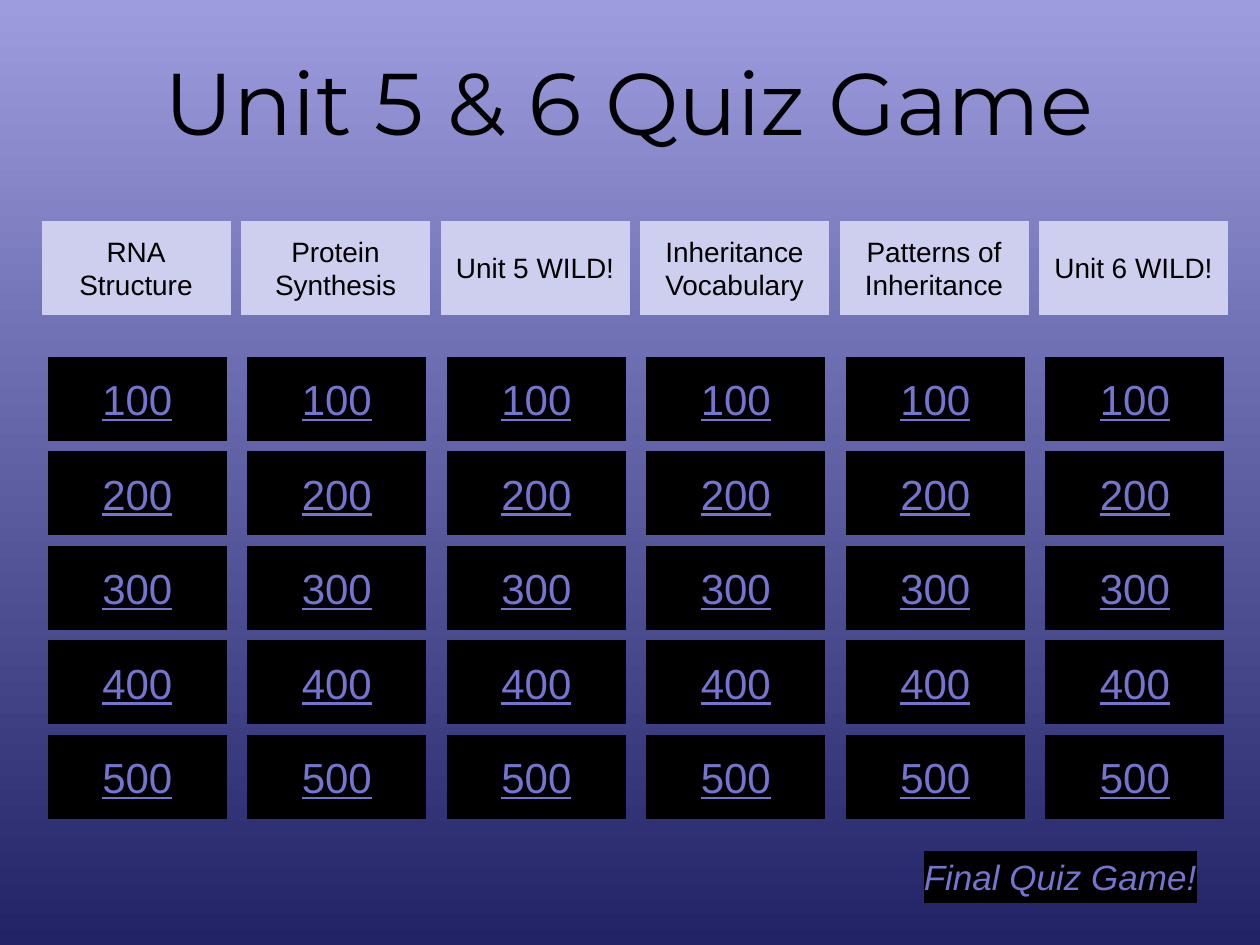
from pptx import Presentation
from pptx.dml.color import RGBColor as Rgb
from pptx.enum.shapes import MSO_SHAPE as Shape
from pptx.enum.text import MSO_ANCHOR as Anchor, MSO_AUTO_SIZE as Fit, PP_ALIGN as Align
from pptx.util import Inches, Pt

HUES = {
    "top": "9C9CDF",
    "base": "222267",
    "head": "CECEEF",
    "black": "000000",
    "link": "7575D1",
}
TOPICS = [
    "RNA\nStructure",
    "Protein\nSynthesis",
    "Unit 5 WILD!",
    "Inheritance\nVocabulary",
    "Patterns of\nInheritance",
    "Unit 6 WILD!",
]
PITCH = 9.5 / len(TOPICS)  # column step
STEP = 0.75  # row step


class Board:
    def __init__(self, slide):
        self.slide = slide

    def hue(self, name):
        return Rgb.from_string(HUES[name])

    def backdrop(self, *names):
        fill = self.slide.background.fill
        fill.gradient()
        fill.gradient_angle = 270
        for stop, name in zip(fill.gradient_stops, names):
            stop.color.rgb = self.hue(name)

    def label(self, frame, text, size, color, face="Arial", italic=False, underline=False):
        frame.text = text
        frame.auto_size = Fit.NONE
        frame.vertical_anchor = Anchor.MIDDLE
        for para in frame.paragraphs:
            para.alignment = Align.CENTER
            font = para.font
            font.name, font.size = face, Pt(size)
            font.italic, font.underline = italic, underline
            font.color.rgb = self.hue(color)

    def title(self, text, x, y, w, h):
        shape = self.slide.shapes.title
        shape.left, shape.top = Inches(x), Inches(y)
        shape.width, shape.height = Inches(w), Inches(h)
        self.label(shape.text_frame, text, 50, "black", "Montserrat")

    def button(self, text, x, y, w, h, fill, size, color, **style):
        shape = self.slide.shapes.add_shape(
            Shape.ACTION_BUTTON_CUSTOM, Inches(x), Inches(y), Inches(w), Inches(h))
        shape.shadow.inherit = False
        shape.fill.solid()
        shape.fill.fore_color.rgb = self.hue(fill)
        shape.line.fill.background()
        self.label(shape.text_frame, text, size, color, **style)
        shape.text_frame.word_wrap = False


def main():
    deck = Presentation()
    deck.slide_width, deck.slide_height = Inches(10), Inches(7.5)
    board = Board(deck.slides.add_slide(deck.slide_layouts[5]))

    # Backdrop and title
    board.backdrop("top", "base")
    board.title("Unit 5 & 6 Quiz Game", 0.33, 0.17, 9.33, 1.25)

    # Topic headings
    for col, topic in enumerate(TOPICS):
        board.button(topic, 0.33 + col * PITCH, 1.75, 1.5, 0.75, "head", 16, "black")

    # Point values under each topic
    for col in range(len(TOPICS)):
        for row in range(5):
            board.button(str(100 * (row + 1)), 0.38 + col * PITCH, 2.83 + row * STEP,
                         1.42, 0.67, "black", 24, "link", underline=True)

    # Final round
    board.button("Final Quiz Game!", 7.33, 6.75, 2.17, 0.42,
                 "black", 20, "link", italic=True)

    deck.save("out.pptx")


if __name__ == "__main__":
    main()
